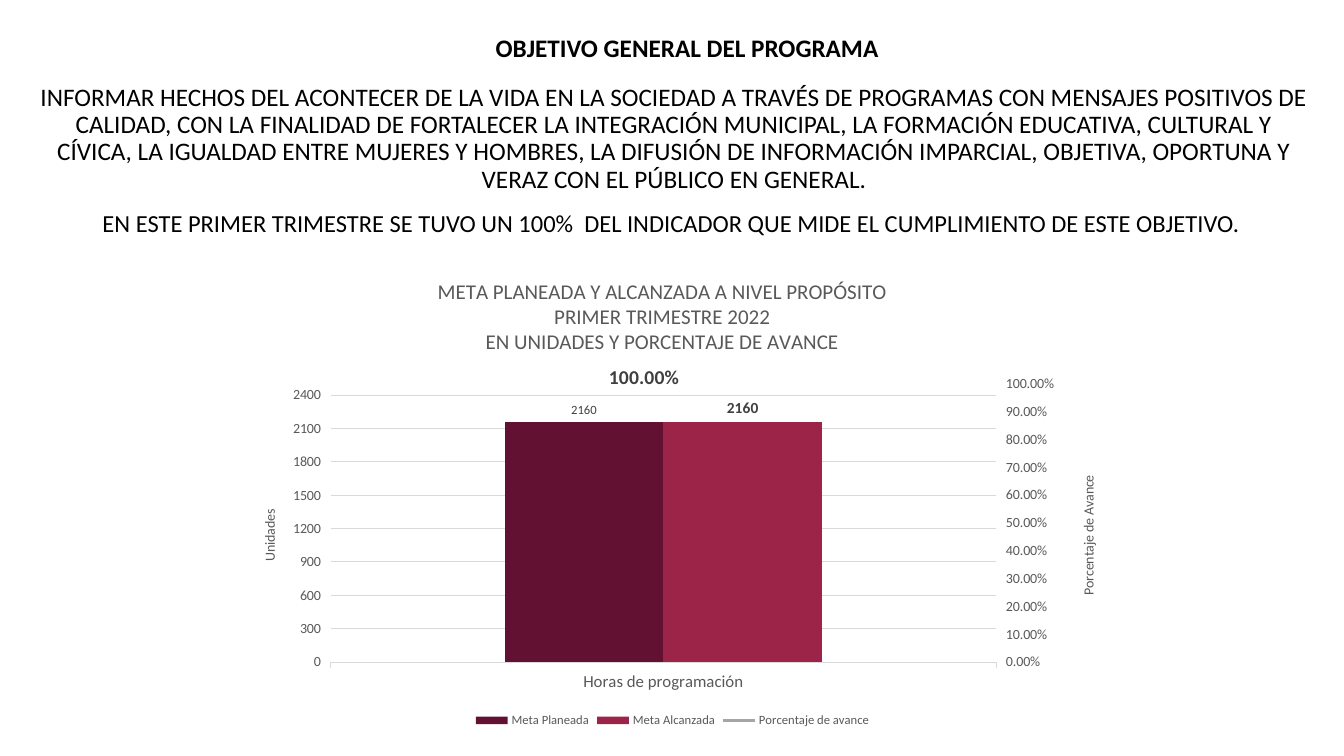
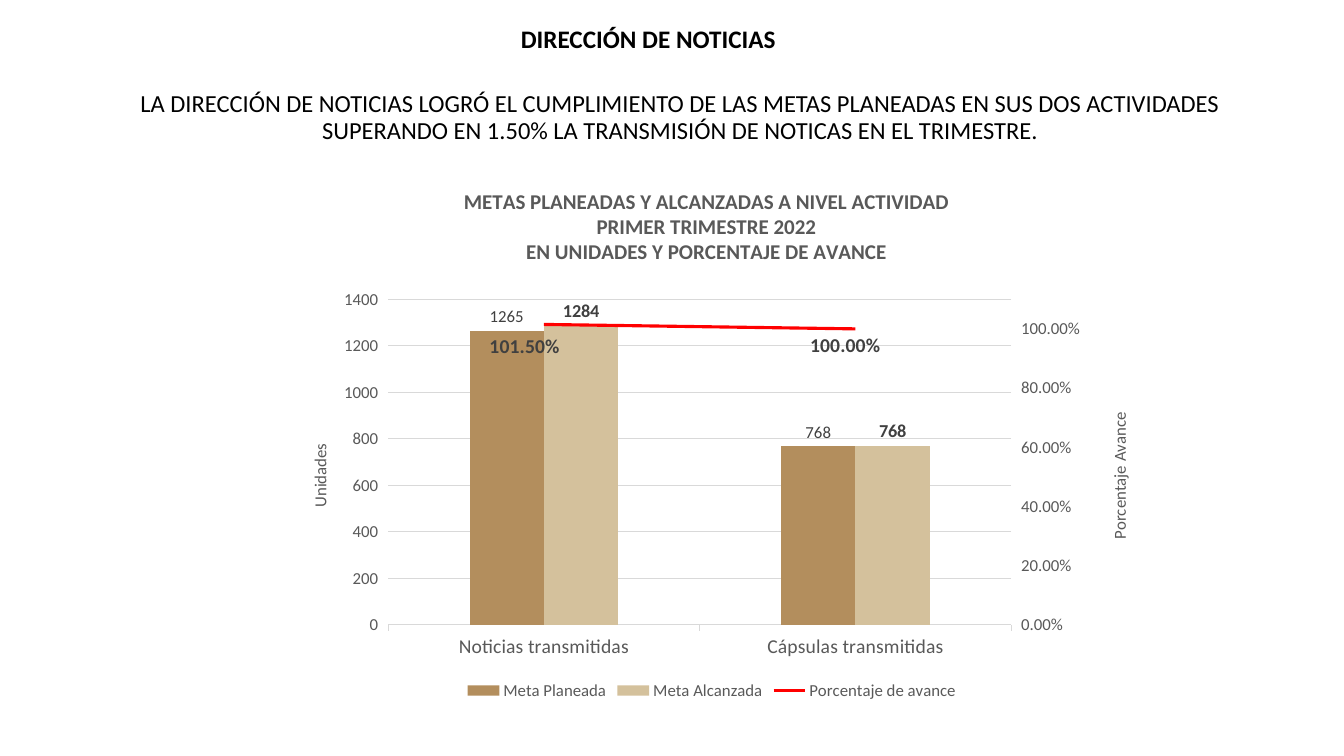
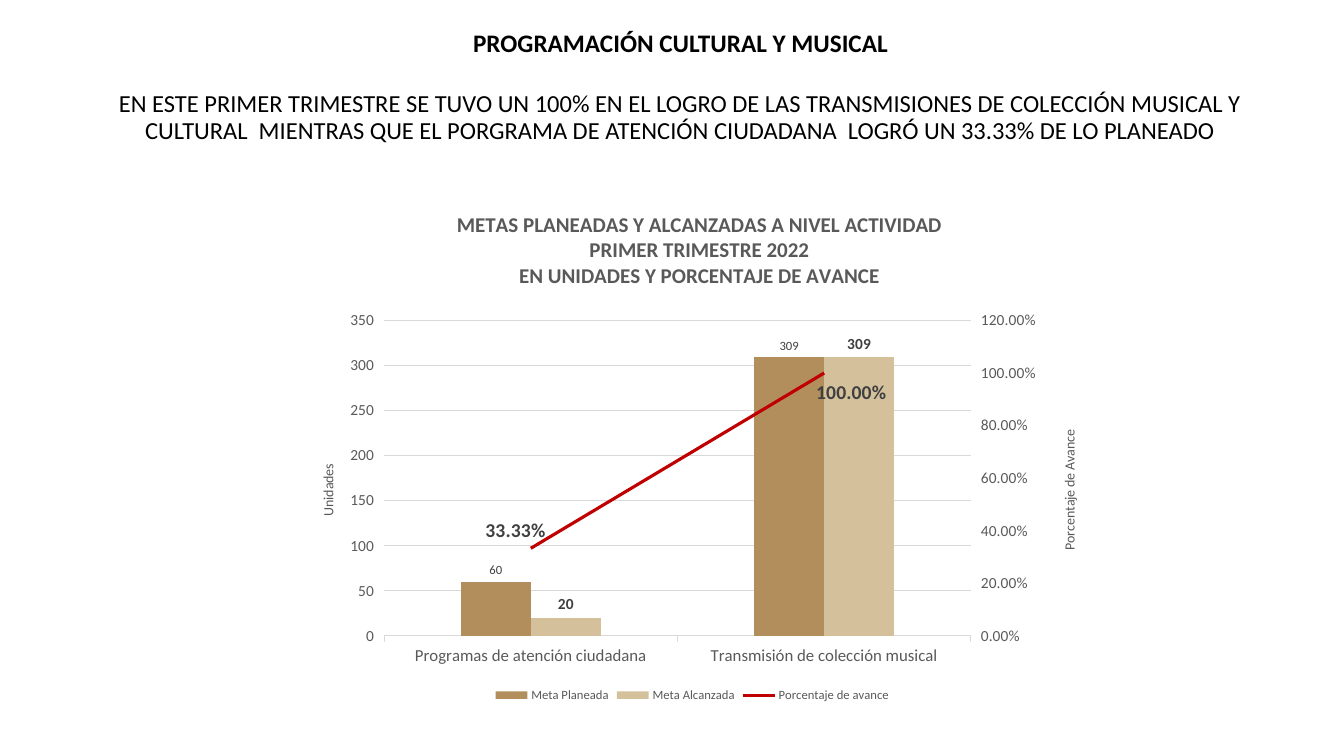
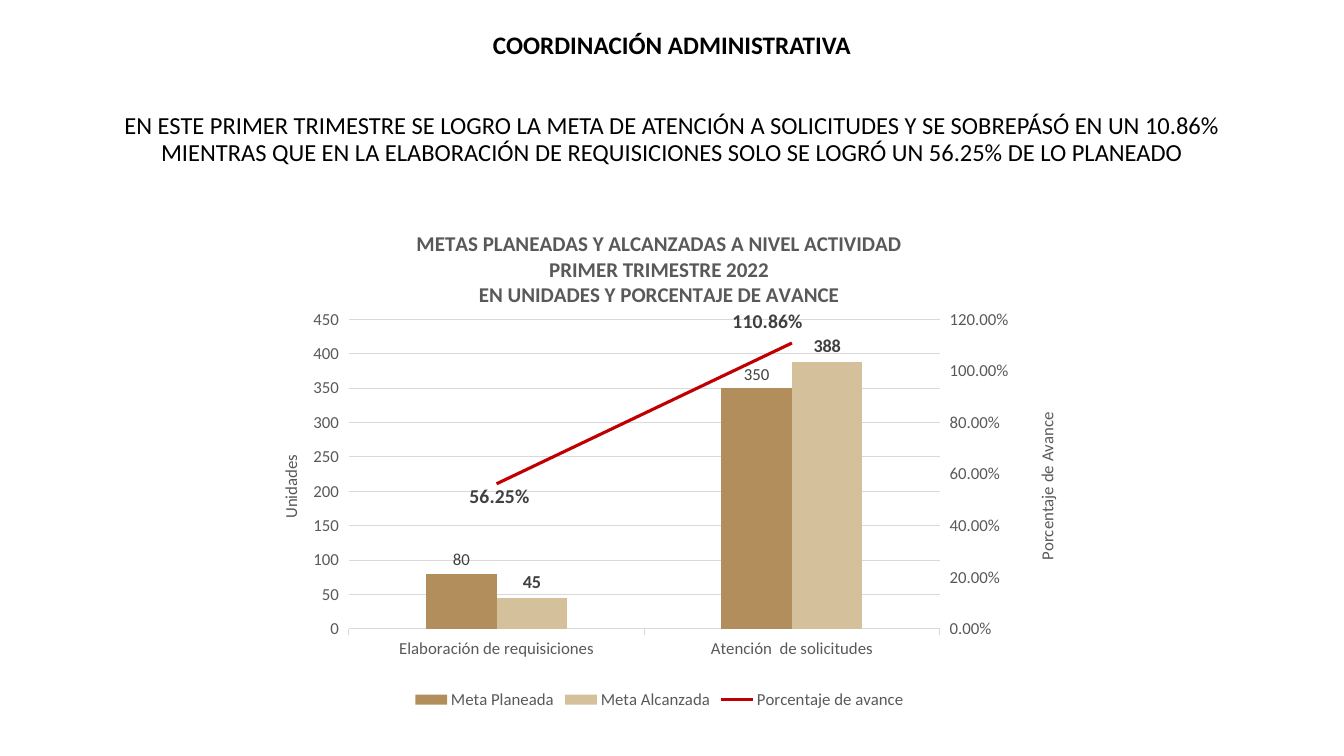
import copy

import pptx
import pptx.chart.data
import pptx.dml.color
import pptx.enum.chart
import pptx.enum.text
import pptx.oxml
import pptx.oxml.ns
import pptx.util

Inches = pptx.util.Inches
Pt = pptx.util.Pt
RGBColor = pptx.dml.color.RGBColor

FONT = "Calibri"
BLACK = RGBColor(0x00, 0x00, 0x00)
DARK_GRAY = RGBColor(0x40, 0x40, 0x40)
GRAY = RGBColor(0x59, 0x59, 0x59)
SILVER = RGBColor(0xA5, 0xA5, 0xA5)
LIGHT_GRAY = RGBColor(0xD9, 0xD9, 0xD9)
WINE = RGBColor(0x62, 0x11, 0x32)
CRIMSON = RGBColor(0x9D, 0x24, 0x49)
BRONZE = RGBColor(0xB3, 0x8E, 0x5D)
SAND = RGBColor(0xD4, 0xC1, 0x9C)
RED = RGBColor(0xFF, 0x00, 0x00)
DARK_RED = RGBColor(0xC0, 0x00, 0x00)

SERIES_NAMES = ("Meta Planeada", "Meta Alcanzada", "Porcentaje de avance")
PERIOD_LINES = ["PRIMER TRIMESTRE 2022", "EN UNIDADES Y PORCENTAJE DE AVANCE"]
ACTIVITY_TITLE = ["METAS PLANEADAS Y ALCANZADAS A NIVEL ACTIVIDAD"] + PERIOD_LINES
PERCENT = "0.00%"

# Positions are in inches on the slide; label_shifts move a percentage
# away from its usual place at the right of its point.
SLIDES = [
    {
        "heading": ("OBJETIVO GENERAL DEL PROGRAMA", (3.48, 0.31, 6.67, 0.37)),
        "texts": [
            ("INFORMAR HECHOS DEL ACONTECER DE LA VIDA EN LA SOCIEDAD A TRAVÉS DE PROGRAMAS CON "
             "MENSAJES POSITIVOS DE CALIDAD, CON LA FINALIDAD DE FORTALECER LA INTEGRACIÓN "
             "MUNICIPAL, LA FORMACIÓN EDUCATIVA, CULTURAL Y CÍVICA, LA IGUALDAD ENTRE MUJERES Y "
             "HOMBRES, LA DIFUSIÓN DE INFORMACIÓN IMPARCIAL, OBJETIVA, OPORTUNA Y VERAZ CON EL "
             "PÚBLICO EN GENERAL.", (0.3, 0.79, 12.77, 1.19), 18),
            ("EN ESTE PRIMER TRIMESTRE SE TUVO UN 100%  DEL INDICADOR QUE MIDE EL CUMPLIMIENTO "
             "DE ESTE OBJETIVO.", (0.28, 2.05, 12.77, 0.37), 17.5),
        ],
        "chart": {
            "frame": (2.31, 2.65, 8.72, 4.61), "plot": (3.28, 3.81, 6.6, 2.76),
            "title": ["META PLANEADA Y ALCANZADA A NIVEL PROPÓSITO"] + PERIOD_LINES,
            "title_bold": False, "title_at": (4.31, 2.72),
            "left_title": ("Unidades", (2.56, 5.03)),
            "right_title": ("Porcentaje de Avance", (10.68, 4.69)),
            "categories": ["Horas de programación"],
            "values": ([2160], [2160], [1]),
            "colors": (WINE, CRIMSON, SILVER),
            "left_scale": (2500, 300), "right_scale": (1, 0.1),
            "sizes": {"base": 10, "category": 12, "value": 10, "legend": 9, "labels": (9, 11, 14)},
            "label_shifts": [(-0.58, -0.06)],
        },
    },
    {
        "heading": ("DIRECCIÓN DE NOTICIAS", (2.58, 0.22, 7.7, 0.37)),
        "texts": [
            ("LA DIRECCIÓN DE NOTICIAS LOGRÓ EL CUMPLIMIENTO DE LAS METAS PLANEADAS EN SUS DOS "
             "ACTIVIDADES SUPERANDO EN 1.50% LA TRANSMISIÓN DE NOTICAS EN EL TRIMESTRE.",
             (0.96, 0.86, 11.58, 0.63), 17.5),
        ],
        "chart": {
            "frame": (2.77, 1.76, 8.58, 5.23), "plot": (3.85, 2.97, 6.18, 3.23),
            "title": ACTIVITY_TITLE, "title_bold": True, "title_at": (4.57, 1.83),
            "left_title": ("Unidades", (3.03, 4.37)),
            "right_title": ("Porcentaje Avance", (10.96, 4.06)),
            "categories": ["Noticias transmitidas", "Cápsulas transmitidas"],
            "values": ([1265, 768], [1284, 768], [1.015, 1]),
            "colors": (BRONZE, SAND, RED),
            "left_scale": (1400, 200), "right_scale": (1.1, 0.2),
            "sizes": {"base": 12, "category": 14, "value": 12, "legend": 12, "labels": (12, 13, 14)},
            "label_shifts": [(-0.58, 0.22), (-0.49, 0.17)],
        },
    },
    {
        "heading": ("PROGRAMACIÓN CULTURAL Y MUSICAL", (2.9, 0.26, 7.7, 0.37)),
        "texts": [
            ("EN ESTE PRIMER TRIMESTRE SE TUVO UN 100% EN EL LOGRO DE LAS TRANSMISIONES DE "
             "COLECCIÓN MUSICAL Y CULTURAL  MIENTRAS QUE EL PORGRAMA DE ATENCIÓN CIUDADANA  "
             "LOGRÓ UN 33.33% DE LO PLANEADO", (0.96, 0.86, 11.58, 0.63), 17.5),
        ],
        "chart": {
            "frame": (2.9, 1.98, 7.93, 5.03), "plot": (3.81, 3.18, 5.82, 3.13),
            "title": ACTIVITY_TITLE, "title_bold": True, "title_at": (4.5, 2.06),
            "left_title": ("Unidades", (3.14, 4.58)),
            "right_title": ("Porcentaje de Avance", (10.49, 4.24)),
            "categories": ["Programas de atención ciudadana", "Transmisión de colección musical"],
            "values": ([60, 309], [20, 309], [0.3333, 1]),
            "colors": (BRONZE, SAND, DARK_RED),
            "left_scale": (350, 50), "right_scale": (1.2, 0.2),
            "sizes": {"base": 10, "category": 12, "value": 11, "legend": 9, "labels": (9, 11, 14)},
            "label_shifts": [(-0.49, -0.18), (-0.12, 0.2)],
        },
    },
    {
        "heading": ("COORDINACIÓN ADMINISTRATIVA", (3.33, 0.28, 6.67, 0.37)),
        "texts": [
            ("EN ESTE PRIMER TRIMESTRE SE LOGRO LA META DE ATENCIÓN A SOLICITUDES Y SE SOBREPÁSÓ "
             "EN UN 10.86% MIENTRAS QUE EN LA ELABORACIÓN DE REQUISICIONES SOLO SE LOGRÓ UN "
             "56.25% DE LO PLANEADO", (0.88, 1.08, 11.58, 0.63), 17.5),
        ],
        "chart": {
            "frame": (2.52, 2.18, 8.04, 4.9), "plot": (3.46, 3.17, 5.86, 3.07),
            "title": ACTIVITY_TITLE, "title_bold": True, "title_at": (4.1, 2.25),
            "left_title": ("Unidades", (2.74, 4.48)),
            "right_title": ("Porcentaje de Avance", (10.24, 4.06)),
            "categories": ["Elaboración de requisiciones", "Atención  de solicitudes"],
            "values": ([80, 350], [45, 388], [0.5625, 1.1086]),
            "colors": (BRONZE, SAND, DARK_RED),
            "left_scale": (450, 50), "right_scale": (1.2, 0.2),
            "sizes": {"base": 12, "category": 12, "value": 12, "legend": 12, "labels": (12, 13, 14)},
            "label_shifts": [(-0.31, 0.13), (-0.63, -0.21)],
        },
    },
]


def style_font(font, size, color, bold=False):
    font.name = FONT
    font.size = Pt(size)
    font.color.rgb = color
    font.bold = bold


def add_text(slide, text, frame, size, bold=False):
    box = slide.shapes.add_textbox(*map(Inches, frame))
    box.text_frame.word_wrap = True
    box.text_frame.auto_size = pptx.enum.text.MSO_AUTO_SIZE.SHAPE_TO_FIT_TEXT
    para = box.text_frame.paragraphs[0]
    para.alignment = pptx.enum.text.PP_ALIGN.CENTER
    para.line_spacing = 0.9
    para.space_after = Pt(6)
    span = para.add_run()
    span.text = text
    style_font(span.font, size, BLACK, bold)


def set_layout(parent, index, fractions, edge=True, inner=False):
    """Give a chart part a manual layout, as fractions of the chart, at a child index."""
    for old in parent.xpath("c:layout"):
        parent.remove(old)
    settings = [("layoutTarget", "inner")] if inner else []
    if edge:
        settings += [("xMode", "edge"), ("yMode", "edge")]
    settings += zip("xywh", fractions)
    items = "".join(f'<c:{name} val="{value}"/>' for name, value in settings)
    parent.insert(index, pptx.oxml.parse_xml(
        f'<c:layout {pptx.oxml.ns.nsdecls("c")}><c:manualLayout>{items}</c:manualLayout></c:layout>'))


def fill_title(title, lines, size, bold, position, rotated=False):
    frame = title.text_frame
    for number, line in enumerate(lines):
        para = frame.add_paragraph() if number else frame.paragraphs[0]
        span = para.add_run()
        span.text = line
        style_font(span.font, size, GRAY, bold)
    if rotated:
        body = title.element.xpath(".//a:bodyPr")[0]
        body.set("rot", "-5400000")
        body.set("vert", "horz")
    set_layout(title.element, 1, position)


def set_value(element, query, value):
    element.xpath(query)[0].set("val", str(value))


def move_to_right_axis(plot_area, title, position, scale):
    """Turn the last column series into a line on a second, right-hand axis."""
    bars = plot_area.xpath("c:barChart")[0]
    series = bars.xpath("c:ser")[-1]
    for flag in series.xpath("c:invertIfNegative"):
        series.remove(flag)
    line_plot = pptx.oxml.parse_xml(
        f'<c:lineChart {pptx.oxml.ns.nsdecls("c")}><c:grouping val="standard"/>'
        '<c:varyColors val="0"/><c:marker val="1"/>'
        '<c:axId val="5001"/><c:axId val="5002"/></c:lineChart>')
    line_plot.insert(2, series)
    bars.addnext(line_plot)

    value_axis = plot_area.xpath("c:valAx")[0]
    right_axis = copy.deepcopy(value_axis)
    hidden_axis = copy.deepcopy(plot_area.xpath("c:catAx")[0])
    value_axis.addnext(right_axis)
    right_axis.addnext(hidden_axis)
    for axis, own, other in ((hidden_axis, 5001, 5002), (right_axis, 5002, 5001)):
        set_value(axis, "c:axId", own)
        set_value(axis, "c:crossAx", other)
    set_value(hidden_axis, "c:delete", 1)
    right_axis.remove(right_axis.xpath("c:majorGridlines")[0])
    for query, value in (("c:axPos", "r"), ("c:crosses", "max"),
                         ("c:scaling/c:max", scale[0]), ("c:majorUnit", scale[1])):
        set_value(right_axis, query, value)
    right_axis.xpath("c:numFmt")[0].set("formatCode", PERCENT)
    right_axis.xpath("c:title//a:t")[0].text = title
    set_layout(right_axis.xpath("c:title")[0], 1, position)


def style_axes(chart, content, place):
    sizes = content["sizes"]
    category_axis, value_axis = chart.category_axis, chart.value_axis
    for axis, size in ((category_axis, sizes["category"]), (value_axis, sizes["value"])):
        style_font(axis.tick_labels.font, size, GRAY)
        axis.major_tick_mark = pptx.enum.chart.XL_TICK_MARK.OUTSIDE
        axis.minor_tick_mark = pptx.enum.chart.XL_TICK_MARK.NONE
    value_axis.has_major_gridlines = True
    for line in (category_axis.format.line, value_axis.major_gridlines.format.line):
        line.color.rgb = LIGHT_GRAY
        line.width = Pt(0.75)
    value_axis.format.line.fill.background()
    value_axis.minimum_scale = 0
    value_axis.maximum_scale, value_axis.major_unit = content["left_scale"]
    value_axis.tick_labels.number_format = "General"
    value_axis.tick_labels.number_format_is_linked = False
    text, position = content["left_title"]
    fill_title(value_axis.axis_title, [text], sizes["base"], False, place(position), rotated=True)


def style_series(chart, content):
    columns, lines = chart.plots
    columns.gap_width = 219
    columns.vary_by_categories = False
    all_series = [*columns.series, *lines.series]
    for number, (series, color) in enumerate(zip(all_series, content["colors"])):
        labels = series.data_labels
        labels.show_value = True
        style_font(labels.font, content["sizes"]["labels"][number], DARK_GRAY, number > 0)
        if number < 2:
            series.format.fill.solid()
            series.format.fill.fore_color.rgb = color
            labels.position = pptx.enum.chart.XL_LABEL_POSITION.OUTSIDE_END
    progress = all_series[-1]
    progress.format.line.color.rgb = content["colors"][-1]
    progress.format.line.width = Pt(2.25)
    progress.marker.style = pptx.enum.chart.XL_MARKER_STYLE.NONE
    progress.smooth = False
    progress.data_labels.number_format = PERCENT
    progress.data_labels.number_format_is_linked = False

    width, height = content["frame"][2:]
    for number, (right, down) in enumerate(content["label_shifts"]):
        label = progress.points[number].data_label
        label.position = pptx.enum.chart.XL_LABEL_POSITION.RIGHT
        style_font(label.font, content["sizes"]["labels"][-1], DARK_GRAY, True)
        element = chart.element.xpath(f".//c:lineChart//c:dLbl[c:idx/@val='{number}']")[0]
        set_layout(element, 1, (right / width, down / height), edge=False)


def add_progress_chart(slide, content):
    left, top, width, height = content["frame"]

    def place(position):
        return (position[0] - left) / width, (position[1] - top) / height

    data = pptx.chart.data.CategoryChartData()
    data.categories = content["categories"]
    for name, values, number_format in zip(SERIES_NAMES, content["values"],
                                           ("General", "General", PERCENT)):
        data.add_series(name, values, number_format)
    chart = slide.shapes.add_chart(pptx.enum.chart.XL_CHART_TYPE.COLUMN_CLUSTERED,
                                   *map(Inches, content["frame"]), data).chart
    style_font(chart.font, content["sizes"]["base"], BLACK)
    chart.has_title = True
    fill_title(chart.chart_title, content["title"], 15, content["title_bold"],
               place(content["title_at"]))
    chart.has_legend = True
    chart.legend.position = pptx.enum.chart.XL_LEGEND_POSITION.BOTTOM
    chart.legend.include_in_layout = False
    style_font(chart.legend.font, content["sizes"]["legend"], GRAY)

    style_axes(chart, content, place)
    plot_area = chart.element.xpath("c:chart/c:plotArea")[0]
    title, position = content["right_title"]
    move_to_right_axis(plot_area, title, place(position), content["right_scale"])
    style_series(chart, content)
    plot = content["plot"]
    set_layout(plot_area, 0, (*place(plot), plot[2] / width, plot[3] / height), inner=True)


def main():
    deck = pptx.Presentation()
    deck.slide_width = Inches(13.33)
    deck.slide_height = Inches(7.5)
    for content in SLIDES:
        slide = deck.slides.add_slide(deck.slide_layouts[6])
        heading, frame = content["heading"]
        add_text(slide, heading, frame, 18, bold=True)
        for text, frame, size in content["texts"]:
            add_text(slide, text, frame, size)
        add_progress_chart(slide, content["chart"])
    deck.save("out.pptx")


if __name__ == "__main__":
    main()
